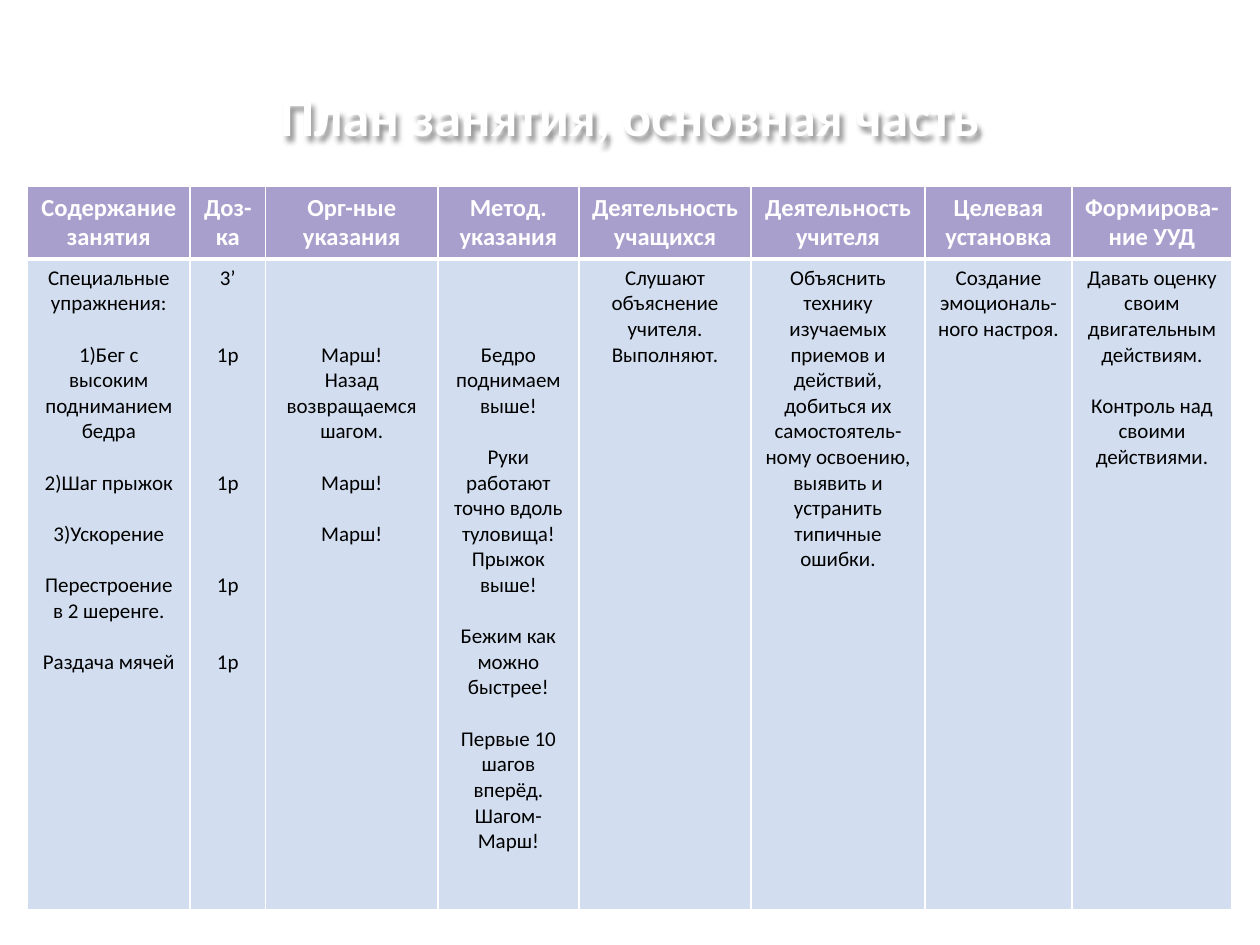
from dataclasses import dataclass

import pptx
import pptx.util
from lxml import etree
from pptx.dml.color import RGBColor
from pptx.enum.text import MSO_ANCHOR, PP_ALIGN
from pptx.oxml import parse_xml
from pptx.oxml.ns import nsdecls
from pptx.util import Pt


@dataclass(frozen=True)
class Theme:
    font: str = "Calibri"
    white: str = "FFFFFF"
    black: str = "000000"
    header_fill: str = "A89FCD"
    body_fill: str = "D2DEEF"
    title_size: float = 31
    header_size: float = 14
    body_size: float = 12
    body_line: float = 14.65
    cell_margin: float = 3.6
    thin: float = 1
    thick: float = 3


THEME = Theme()

# Column width, heading, and body paragraphs as (blank lines above, text)
COLUMNS = [
    (92.9, "Содержание занятия", [
        (0, "Специальные упражнения:"),
        (1, "1)Бег с высоким подниманием бедра"),
        (1, "2)Шаг прыжок"),
        (1, "3)Ускорение"),
        (1, "Перестроение в 2 шеренге."),
        (1, "Раздача мячей"),
    ]),
    (43.2, "Доз-ка", [(0, "3’"), (2, "1р"), (4, "1р"), (3, "1р"), (2, "1р")]),
    (98.6, "Орг-ные указания", [
        (3, "Марш!"),
        (0, "Назад возвращаемся шагом."),
        (1, "Марш!"),
        (1, "Марш!"),
    ]),
    (80.6, "Метод. указания", [
        (3, "Бедро поднимаем выше!"),
        (1, "Руки работают точно вдоль туловища!"),
        (0, "Прыжок выше!"),
        (1, "Бежим как можно быстрее!"),
        (1, "Первые 10 шагов вперёд. Шагом- Марш!"),
    ]),
    (98.6, "Деятельность учащихся", [(0, "Слушают объяснение учителя. Выполняют.")]),
    (99.3, "Деятельность учителя", [
        (0, "Объяснить технику изучаемых приемов и действий, добиться их "
            "самостоятель-ному освоению, выявить и устранить типичные ошибки."),
    ]),
    (84.2, "Целевая установка", [(0, "Создание эмоциональ-ного настроя.")]),
    (91.4, "Формирова-ние УУД", [
        (0, "Давать оценку своим двигательным действиям."),
        (1, "Контроль над своими действиями."),
    ]),
]


def style_paragraph(p, size, color, bold):
    p.alignment = PP_ALIGN.CENTER
    p.font.name = THEME.font
    p.font.size = Pt(size)
    p.font.bold = bold
    p.font.color.rgb = RGBColor.from_string(color)


def add_text_shadow(sp):
    """Give an unfilled text box a soft shadow, which falls from its letters."""
    sp._element.spPr.append(parse_xml(
        f'<a:effectLst {nsdecls("a")}>'
        f'<a:outerShdw blurRad="{Pt(3)}" dist="{Pt(3)}" dir="3600000" algn="tl" rotWithShape="0">'
        f'<a:srgbClr val="{THEME.black}"><a:alpha val="40000"/></a:srgbClr>'
        '</a:outerShdw></a:effectLst>'))


def add_title(s, text, left, top, width, height):
    sp = s.shapes.add_textbox(Pt(left), Pt(top), Pt(width), Pt(height))
    sp.fill.background()
    add_text_shadow(sp)
    tf = sp.text_frame
    tf.word_wrap = True
    tf.vertical_anchor = MSO_ANCHOR.MIDDLE
    p = tf.paragraphs[0]
    p.text = text
    p.line_spacing = 0.7
    style_paragraph(p, THEME.title_size, THEME.white, True)


def set_borders(cell, **widths):
    """Draw white borders; widths are keyed L, R, T, B in schema order."""
    tcPr = cell._tc.get_or_add_tcPr()
    for i, (side, width) in enumerate(widths.items()):
        tcPr.insert(i, parse_xml(
            f'<a:ln{side} {nsdecls("a")} w="{Pt(width)}"><a:solidFill>'
            f'<a:srgbClr val="{THEME.white}"/></a:solidFill></a:ln{side}>'))


def fill_cell(cell, items, fill, size, color, bold):
    """Write (blank lines above, text) items; the first gap goes into the margin."""
    cell.fill.solid()
    cell.fill.fore_color.rgb = RGBColor.from_string(fill)
    cell.margin_top = Pt(THEME.cell_margin + items[0][0] * THEME.body_line)
    tf = cell.text_frame
    for i, (gap, text) in enumerate(items):
        p = tf.add_paragraph() if i else tf.paragraphs[0]
        p.text = text
        if i and gap:
            p.space_before = Pt(gap * THEME.body_line)
        style_paragraph(p, size, color, bold)


def add_plan_table(s, left, top, width, height, header_height):
    table = s.shapes.add_table(2, len(COLUMNS), Pt(left), Pt(top), Pt(width), Pt(height)).table
    table.rows[0].height = Pt(header_height)
    table.rows[1].height = Pt(height - header_height)
    scale = width / sum(column[0] for column in COLUMNS)
    thin, thick = THEME.thin, THEME.thick
    for c, (column_width, heading, items) in enumerate(COLUMNS):
        table.columns[c].width = Pt(column_width * scale)
        header, body = table.cell(0, c), table.cell(1, c)
        fill_cell(header, [(0, heading)], THEME.header_fill, THEME.header_size, THEME.white, True)
        set_borders(header, L=thin, R=thin, T=thin, B=thick)
        fill_cell(body, items, THEME.body_fill, THEME.body_size, THEME.black, False)
        set_borders(body, L=thin, R=thin, T=thick, B=thin)


def main():
    prs = pptx.Presentation()
    prs.slide_width, prs.slide_height = Pt(720), Pt(540)
    s = prs.slides.add_slide(prs.slide_layouts[6])
    add_title(s, "План занятия, основная часть", 24.5, 20.2, 670.3, 99.4)
    add_plan_table(s, 15.8, 106.6, 688.3, 413.5, 41.4)
    prs.save("out.pptx")


if __name__ == "__main__":
    main()
